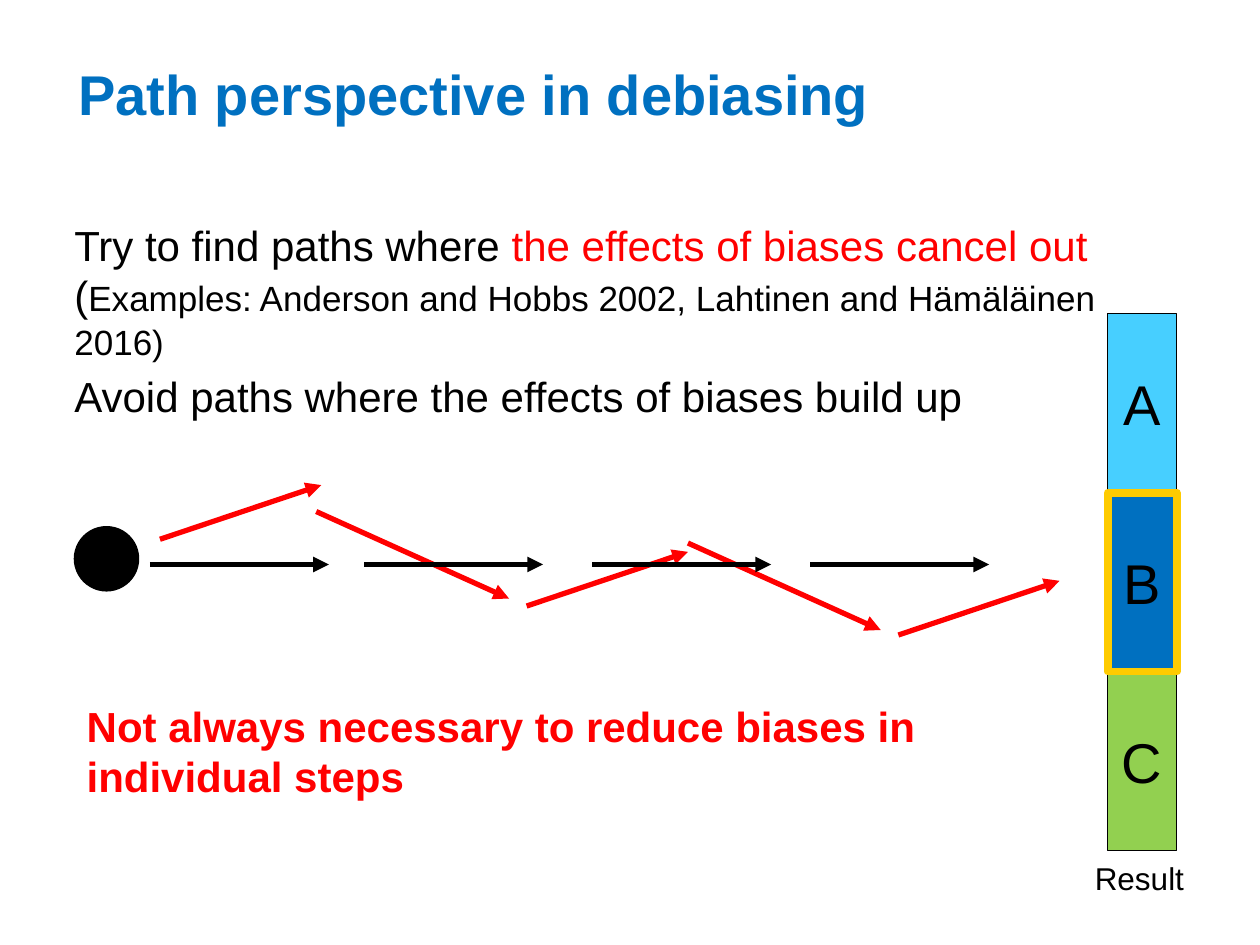
from pptx import Presentation
from pptx.dml.color import RGBColor
from pptx.enum import shapes, text
from pptx.oxml import ns
from pptx.util import Inches, Pt
from lxml import etree

THEME = {
    "font": "Arial",
    "black": "000000", "red": "FF0000", "blue": "0070C0",
    "sky": "47CFFF", "green": "92D050", "gold": "FECB00",
    "title": 32, "body": 24, "cite": 20, "label": 18,
    "thin": 0.75, "arrow": 3, "highlight": 4.5,
}

# Content: each paragraph is a list of (text, size, colour)
TITLE = [[("Path perspective in debiasing", "title", "blue")]]
ADVICE = [
    [("Try to find paths where ", "body", "black"),
     ("the effects of biases cancel out ", "body", "red"),
     ("(", "body", "black"),
     ("Examples: Anderson and Hobbs 2002, Lahtinen and Hämäläinen 2016)",
      "cite", "black")],
    [("Avoid paths where the effects of biases build up", "body", "black")],
]
CONCLUSION = [[("Not always necessary to reduce biases in individual steps",
                "body", "red")]]
RESULT = [[("Result", "label", "black")]]

# Outcomes: letter, row in the column, fill, outline, outline width
OUTCOMES = [
    ("A", 0, "sky", "black", "thin"),
    ("C", 2, "green", "black", "thin"),
    ("B", 1, "blue", "gold", "highlight"),
]
COLUMN_LEFT, COLUMN_TOP, CELL_WIDTH, CELL_HEIGHT = 8.79, 2.49, 0.55, 1.42

# Paths: biased steps go up or down, unbiased steps run level
UP, DOWN, LEVEL = (1.28, -0.43), (1.53, 0.69), (1.42, 0)
BIASED_STEPS = [(2.51, 4.06, DOWN), (1.27, 4.28, UP), (4.18, 4.81, UP)]
LATE_BIASED_STEPS = [(5.46, 4.31, DOWN), (7.13, 5.04, UP)]
UNBIASED_STEPS = [(left, 4.48, LEVEL) for left in (1.19, 2.89, 4.7, 6.43)]


def color(name):
    return RGBColor.from_string(THEME[name])


def place(box, left, top, width, height):
    box.left, box.top = Inches(left), Inches(top)
    box.width, box.height = Inches(width), Inches(height)


def write(box, paragraphs, bold=False, margins=True, wrap=True,
          anchor=text.MSO_ANCHOR.TOP, align=text.PP_ALIGN.LEFT, gap=0):
    frame = box.text_frame
    frame.word_wrap = wrap
    frame.vertical_anchor = anchor
    if not margins:
        frame.margin_left = frame.margin_right = 0
        frame.margin_top = frame.margin_bottom = 0
    for index, spans in enumerate(paragraphs):
        para = frame.add_paragraph() if index else frame.paragraphs[0]
        para.alignment = align
        para.space_before = Pt(gap if index else 0)
        para.font.name = THEME["font"]
        para.font.bold = bold
        for words, size, tint in spans:
            span = para.add_run()
            span.text = words
            span.font.size = Pt(THEME[size])
            span.font.color.rgb = color(tint)


def add_text(page, area, paragraphs, **options):
    box = page.shapes.add_textbox(*map(Inches, area))
    write(box, paragraphs, **options)


def add_block(page, kind, area, fill, outline, width):
    block = page.shapes.add_shape(kind, *map(Inches, area))
    block.shadow.inherit = False
    block.fill.solid()
    block.fill.fore_color.rgb = color(fill)
    block.line.color.rgb = color(outline)
    block.line.width = Pt(THEME[width])
    return block


def add_arrows(page, steps, tint):
    for left, top, (run, rise) in steps:
        arrow = page.shapes.add_connector(
            shapes.MSO_CONNECTOR.STRAIGHT, Inches(left), Inches(top),
            Inches(left + run), Inches(top + rise))
        arrow.line.color.rgb = color(tint)
        arrow.line.width = Pt(THEME["arrow"])
        head = etree.SubElement(arrow.line._get_or_add_ln(), ns.qn("a:tailEnd"))
        head.set("type", "triangle")
        etree.SubElement(arrow._element.spPr, ns.qn("a:effectLst"))


def main():
    deck = Presentation()
    deck.slide_width, deck.slide_height = Inches(10), Inches(7.5)
    page = deck.slides.add_slide(deck.slide_layouts[5])

    # Title and advice
    title = page.shapes.title
    place(title, 0.62, 0.47, 8.73, 1.18)
    write(title, TITLE, bold=True, margins=False)
    add_text(page, (0.59, 1.74, 8.15, 4.87), ADVICE, margins=False,
             gap=0.2 * THEME["body"])

    # Column of outcomes, the highlighted one on top
    for letter, row, fill, outline, width in OUTCOMES:
        area = (COLUMN_LEFT, COLUMN_TOP + row * CELL_HEIGHT,
                CELL_WIDTH, CELL_HEIGHT)
        cell = add_block(page, shapes.MSO_SHAPE.RECTANGLE, area,
                         fill, outline, width)
        write(cell, [[(letter, "title", "black")]], wrap=False,
              anchor=text.MSO_ANCHOR.MIDDLE, align=text.PP_ALIGN.CENTER)

    # Starting point and the two paths
    add_arrows(page, BIASED_STEPS, "red")
    add_block(page, shapes.MSO_SHAPE.OVAL, (0.59, 4.18, 0.51, 0.51),
              "black", "black", "thin")
    add_arrows(page, LATE_BIASED_STEPS, "red")
    add_arrows(page, UNBIASED_STEPS, "black")

    # Conclusion and column caption
    add_text(page, (0.59, 5.51, 8, 0.91), CONCLUSION, bold=True)
    add_text(page, (8.59, 6.77, 0.92, 0.4), RESULT, wrap=False)

    deck.save("out.pptx")


if __name__ == "__main__":
    main()
